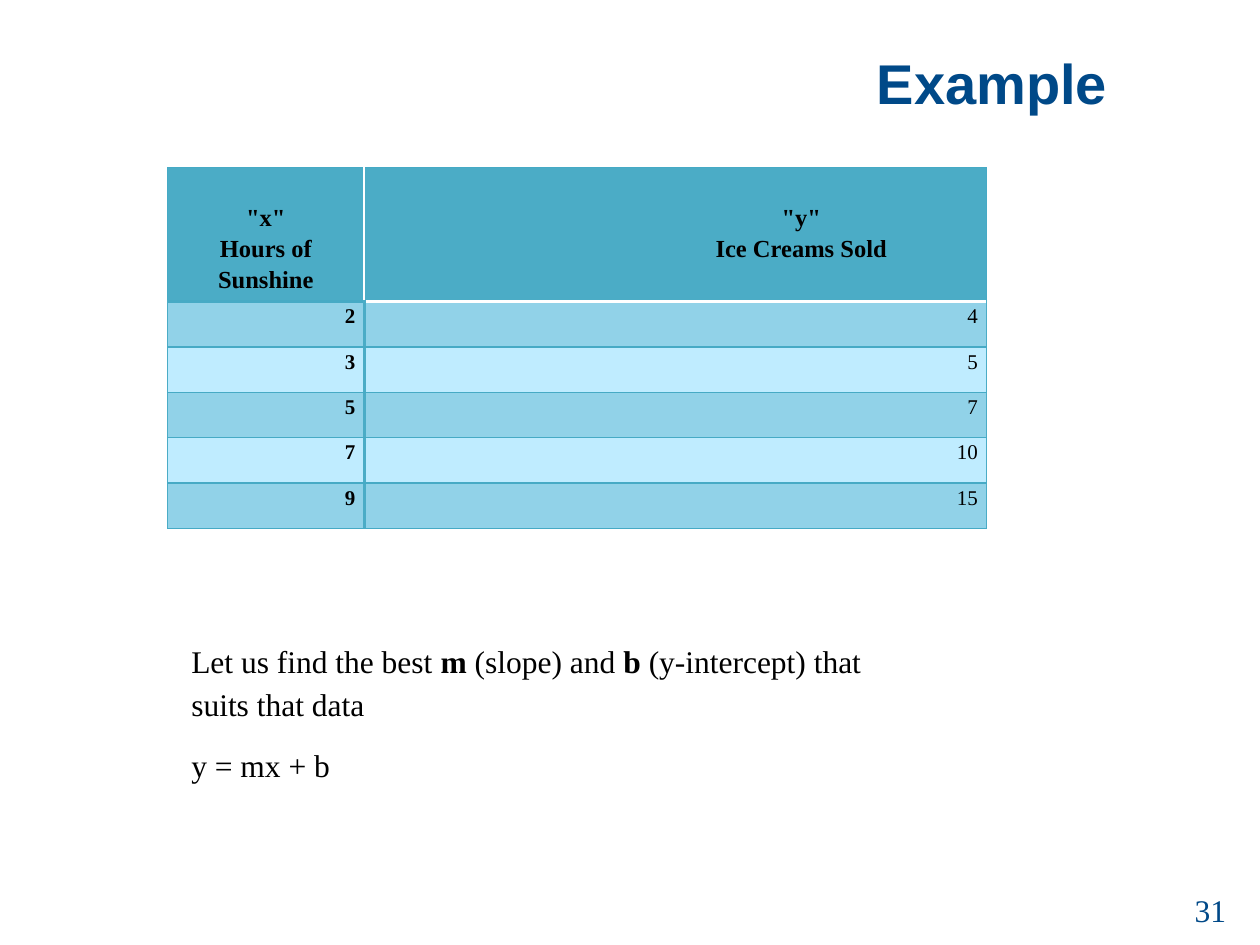
from dataclasses import dataclass
from lxml.etree import SubElement
from pptx import Presentation
from pptx.dml.color import RGBColor
from pptx.enum.text import MSO_ANCHOR as Anchor, PP_ALIGN as Align
from pptx.oxml.ns import qn
from pptx.util import Inches, Pt

NAVY = RGBColor(0x00, 0x49, 0x88)
BLACK = RGBColor(0, 0, 0)
WHITE = RGBColor(255, 255, 255)
TEAL = RGBColor(0x4B, 0xAC, 0xC6)
EDGE = RGBColor(0x46, 0xAA, 0xC5)
DARK = RGBColor(0x91, 0xD2, 0xE8)
LIGHT = RGBColor(0xBF, 0xEC, 0xFF)
SERIF = "Times New Roman"


@dataclass
class Style:
    size: int
    color: RGBColor = BLACK
    bold: bool = False
    font: str = SERIF
    align: Align = Align.LEFT
    space: float = 1.0


@dataclass
class Line:
    side: str
    color: RGBColor = EDGE
    width: float = 0.75


def format_run(run, style: Style) -> None:
    run.font.size = Pt(style.size)
    run.font.name = style.font
    run.font.bold = style.bold
    run.font.color.rgb = style.color


def format_text(frame, style: Style) -> None:
    for par in frame.paragraphs:
        par.alignment = style.align
        par.line_spacing = style.space
        for run in par.runs:
            format_run(run, style)


def add_text(slide, box: tuple, text: str, style: Style):
    frame = slide.shapes.add_textbox(*map(Inches, box)).text_frame
    frame.word_wrap = True
    frame.text = text
    format_text(frame, style)
    return frame


def draw_edges(cell, lines: list[Line]) -> None:
    props = cell._tc.get_or_add_tcPr()
    for line in lines:
        edge = SubElement(props, qn(f"a:ln{line.side}"), w=str(Pt(line.width)))
        solid = SubElement(edge, qn("a:solidFill"))
        SubElement(solid, qn("a:srgbClr"), val=str(line.color))


def fill_cell(cell, text: str, style: Style, fill: RGBColor, lines: list[Line]) -> None:
    draw_edges(cell, lines)
    cell.fill.solid()
    cell.fill.fore_color.rgb = fill
    cell.margin_left = cell.margin_right = Inches(0.07)
    cell.margin_top = cell.margin_bottom = 0
    cell.text = text
    format_text(cell.text_frame, style)


def add_grid(slide, heads: list[str], data: list[tuple]) -> None:
    frame = slide.shapes.add_table(
        len(data) + 1, 2, Inches(1.33), Inches(1.33), Inches(6.5), Inches(2.85))
    table = frame.table
    for col, width in zip(table.columns, (1.56, 4.94)):
        col.width = Inches(width)
    for row in table.rows:
        row.height = Inches(0.36)
    table.rows[0].height = Inches(1.05)

    head = Style(14, bold=True, align=Align.CENTER, space=1.15)
    for col, text in enumerate(heads):
        cell = table.cell(0, col)
        rule = Line("B", WHITE if col else EDGE, 2)
        fill_cell(cell, text, head, TEAL, [Line("R" if col else "L"), Line("T"), rule])
        cell.margin_top = Inches(0.26)
    table.cell(0, 1).margin_left = Inches(2.07)

    for num, pair in enumerate(data, 1):
        for col, value in enumerate(pair):
            body = Style(12, bold=col == 0, align=Align.RIGHT, space=1.15)
            top = Line("T", WHITE if col else EDGE, 2) if num == 1 else Line("T")
            lines = [Line("L", TEAL, 2 if col else 0.75),
                     Line("R", TEAL, 0.75 if col else 2), top, Line("B")]
            fill_cell(table.cell(num, col), str(value), body,
                      DARK if num % 2 else LIGHT, lines)


def add_notes(slide) -> None:
    style = Style(18, space=1.15)
    frame = add_text(slide, (1.42, 5, 6, 1.29), "", style)
    first = frame.paragraphs[0]
    parts = ["Let us find the best ", "m", " (slope) and ", "b",
             " (y-intercept) that suits that data"]
    for text in parts:
        first.add_run().text = text
    frame.add_paragraph().text = "y = mx + b"
    format_text(frame, style)
    for par in frame.paragraphs:
        par.space_after = Pt(10)
    for run in first.runs[1::2]:
        run.font.bold = True


def main() -> None:
    deck = Presentation()
    deck.slide_width, deck.slide_height = Inches(10), Inches(7.5)
    slide = deck.slides.add_slide(deck.slide_layouts[6])
    title = add_text(slide, (0.5, 0.3, 9, 0.7), "Example",
                     Style(32, NAVY, True, "Arial", Align.RIGHT))
    title.margin_right = Inches(0.71)
    title.vertical_anchor = Anchor.MIDDLE
    add_text(slide, (7.5, 7.02, 2.33, 0.4), "31", Style(18, NAVY, align=Align.RIGHT))
    add_grid(slide, ['"x"\vHours of Sunshine', '"y"\vIce Creams Sold'],
             [(2, 4), (3, 5), (5, 7), (7, 10), (9, 15)])
    add_notes(slide)
    deck.save("out.pptx")


if __name__ == "__main__":
    main()
